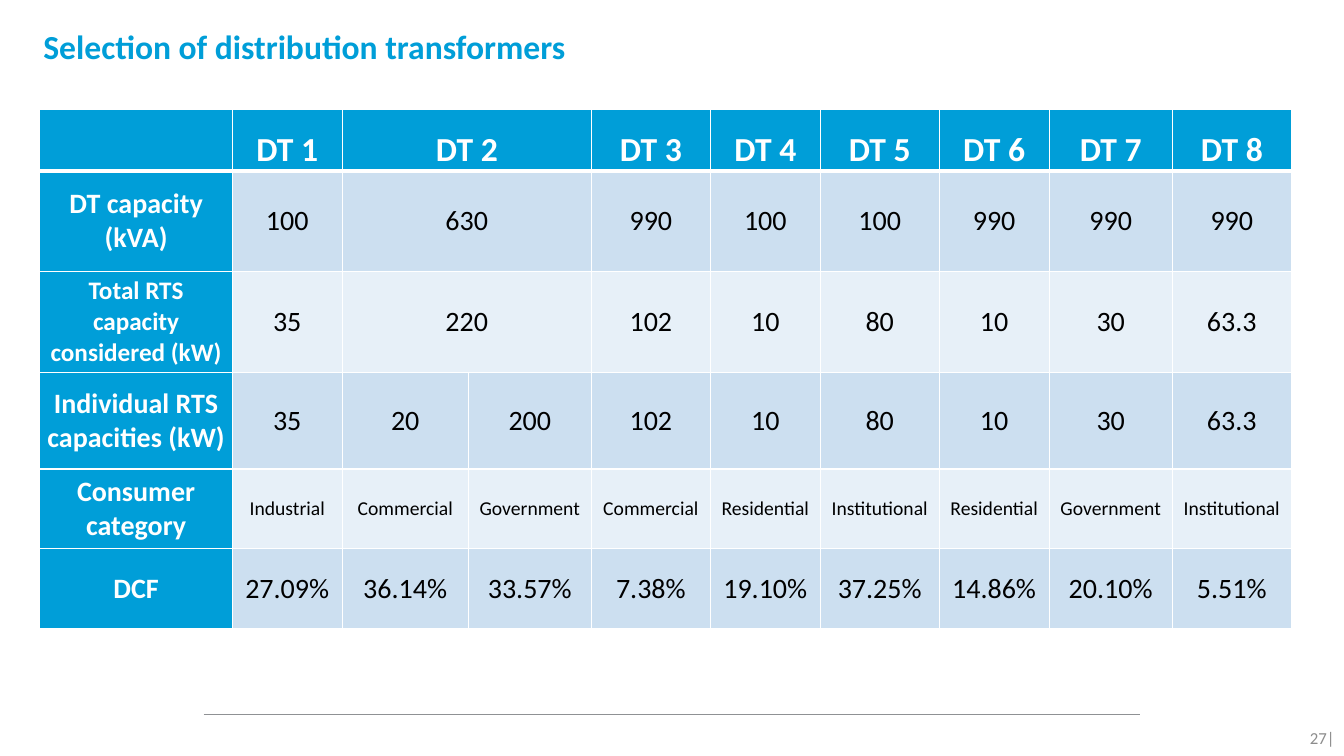
from dataclasses import dataclass

from lxml import etree
from pptx import Presentation
from pptx.dml.color import RGBColor
from pptx.enum.shapes import MSO_CONNECTOR
from pptx.enum.text import MSO_ANCHOR, PP_ALIGN
from pptx.oxml.ns import qn
from pptx.util import Pt

STRAIGHT = MSO_CONNECTOR.STRAIGHT
TOP, MIDDLE, BOTTOM = MSO_ANCHOR.TOP, MSO_ANCHOR.MIDDLE, MSO_ANCHOR.BOTTOM
LEFT, CENTER, RIGHT = PP_ALIGN.LEFT, PP_ALIGN.CENTER, PP_ALIGN.RIGHT

FONT = "Calibri"
COLORS = {
    "accent": "009ED8",
    "band_dark": "CCDFF0",
    "band_light": "E7F0F8",
    "white": "FFFFFF",
    "black": "000000",
    "rule": "8F9194",
    "page_number": "8C8C8C",
}


@dataclass(frozen=True)
class TextStyle:
    size: float
    color: str
    bold: bool = False
    align: PP_ALIGN = CENTER


@dataclass(frozen=True)
class Label:
    text: str
    left: float
    top: float
    width: float
    height: float
    style: TextStyle
    anchor: MSO_ANCHOR
    side_inset: float


@dataclass(frozen=True)
class TableRow:
    height: float
    label: str
    values: tuple[str, ...]
    label_size: float = 20
    value_size: float = 20
    side_inset: float = 5.25
    top_inset: float = 0


LABELS = (
    Label("Selection of distribution transformers", 31, 15, 888.5, 62.5,
          TextStyle(24, "accent", True, LEFT), TOP, 0),
    Label("27|", 899.5, 512.5, 61, 29,
          TextStyle(12, "page_number", align=RIGHT), MIDDLE, 7.2),
)

COLUMN_WIDTHS = (137.5, 78.5, 90, 88, 85, 78.5, 85, 78.5, 88, 85)
SPLIT_COLUMN = 2
MERGED_ROWS = (0, 1, 2)
ROWS = (
    TableRow(44, "", ("DT 1", "DT 2", "", "DT 3", "DT 4", "DT 5", "DT 6", "DT 7", "DT 8"),
             value_size=24),
    TableRow(72, "DT capacity (kVA)",
             ("100", "630", "", "990", "100", "100", "990", "990", "990")),
    TableRow(72, "Total RTS capacity considered (kW)",
             ("35", "220", "", "102", "10", "80", "10", "30", "63.3"), label_size=18),
    TableRow(69, "Individual RTS capacities (kW)",
             ("35", "20", "200", "102", "10", "80", "10", "30", "63.3")),
    TableRow(57, "Consumer category",
             ("Industrial", "Commercial", "Government", "Commercial", "Residential",
              "Institutional", "Residential", "Government", "Institutional"), value_size=14),
    TableRow(57, "DCF",
             ("27.09%", "36.14%", "33.57%", "7.38%", "19.10%",
              "37.25%", "14.86%", "20.10%", "5.51%"), side_inset=0.75, top_inset=0.75),
)


def rgb(name: str) -> RGBColor:
    return RGBColor.from_string(COLORS[name])


def write(frame, text: str, style: TextStyle) -> None:
    para = frame.paragraphs[0]
    para.text = text
    para.alignment = style.align
    font = para.font
    font.name, font.size, font.bold = FONT, Pt(style.size), style.bold
    font.color.rgb = rgb(style.color)


def add_label(page, label: Label) -> None:
    box = page.shapes.add_textbox(
        Pt(label.left), Pt(label.top), Pt(label.width), Pt(label.height))
    frame = box.text_frame
    frame.word_wrap = True
    frame.vertical_anchor = label.anchor
    frame.margin_left = frame.margin_right = Pt(label.side_inset)
    write(frame, label.text, label.style)


def add_footer_rule(page) -> None:
    rule = page.shapes.add_connector(STRAIGHT, Pt(145.5), Pt(510.5), Pt(814.5), Pt(510.5))
    rule.line.color.rgb = rgb("rule")
    rule.line.width = Pt(0.75)
    etree.SubElement(rule._element.spPr, qn("a:effectLst"))


def set_borders(cell, top: float, bottom: float) -> None:
    properties = cell._tc.get_or_add_tcPr()
    widths = {"lnL": 1, "lnR": 1, "lnT": top, "lnB": bottom}
    for position, (side, width) in enumerate(widths.items()):
        line = etree.Element(qn(f"a:{side}"), w=str(int(Pt(width))))
        fill = etree.SubElement(line, qn("a:solidFill"))
        etree.SubElement(fill, qn("a:srgbClr"), val=COLORS["white"])
        properties.insert(position, line)


def fill_cell(cell, row: TableRow, row_index: int, column_index: int) -> None:
    is_header = row_index == 0
    is_label = column_index == 0
    is_accent = is_header or is_label
    band = "band_dark" if row_index % 2 else "band_light"
    cell.fill.solid()
    cell.fill.fore_color.rgb = rgb("accent" if is_accent else band)
    cell.vertical_anchor = BOTTOM if is_header else MIDDLE
    side_inset, top_inset = (5.25, 0) if is_label else (row.side_inset, row.top_inset)
    cell.margin_left = cell.margin_right = Pt(side_inset)
    cell.margin_top, cell.margin_bottom = Pt(top_inset), Pt(0)
    set_borders(cell, 3 if row_index == 1 else 1, 3 if is_header else 1)
    style = TextStyle(row.label_size if is_label else row.value_size,
                      "white" if is_accent else "black", is_accent)
    write(cell.text_frame, (row.label, *row.values)[column_index], style)


def add_transformer_table(page) -> None:
    table = page.shapes.add_table(
        len(ROWS), len(COLUMN_WIDTHS), Pt(28.5), Pt(78),
        Pt(sum(COLUMN_WIDTHS)), Pt(sum(row.height for row in ROWS))).table
    for column, width in zip(table.columns, COLUMN_WIDTHS):
        column.width = Pt(width)
    for row_index, row in enumerate(ROWS):
        table.rows[row_index].height = Pt(row.height)
        for column_index in range(len(COLUMN_WIDTHS)):
            fill_cell(table.cell(row_index, column_index), row, row_index, column_index)
    for row_index in MERGED_ROWS:
        table.cell(row_index, SPLIT_COLUMN).merge(table.cell(row_index, SPLIT_COLUMN + 1))


def main() -> None:
    deck = Presentation()
    deck.slide_width, deck.slide_height = Pt(960), Pt(540)
    page = deck.slides.add_slide(deck.slide_layouts[6])
    add_footer_rule(page)
    for label in LABELS:
        add_label(page, label)
    add_transformer_table(page)
    deck.save("out.pptx")


if __name__ == "__main__":
    main()
